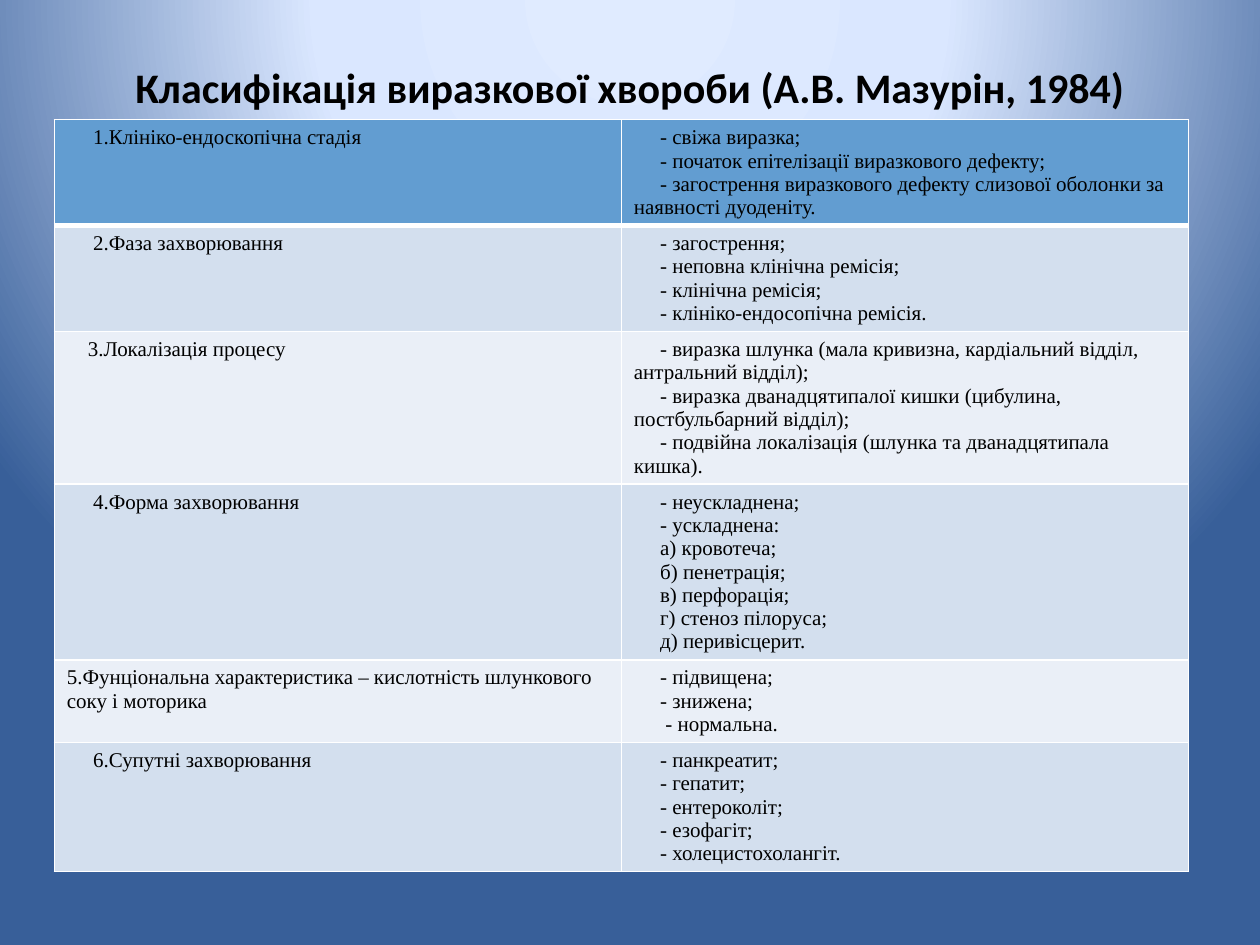
from dataclasses import dataclass

from lxml import etree
from pptx import Presentation
from pptx.dml.color import RGBColor
from pptx.enum.text import MSO_ANCHOR, PP_ALIGN
from pptx.oxml import parse_xml
from pptx.oxml.ns import qn
from pptx.util import Pt

CENTER, LEFT = PP_ALIGN.CENTER, PP_ALIGN.LEFT
MIDDLE = MSO_ANCHOR.MIDDLE
NAMESPACE = "http://schemas.openxmlformats.org/drawingml/2006/main"

BLACK, WHITE = "000000", "FFFFFF"
HEADER_FILL, ODD_FILL, EVEN_FILL = "629DD1", "D3DFEE", "EAEFF7"
BACKGROUND_STOPS = [(0, "E0EBFF"), (40, "DAE7FF"), (100, "385F99")]

TITLE = "Класифiкацiя виразкової хвороби (А.В. Мазурiн, 1984)"
TITLE_FORMAT = {"name": "Calibri", "size": Pt(24), "bold": True}
CELL_FORMAT = {"name": "Times New Roman", "size": Pt(12), "bold": False}
INDENT = 15
COLUMN_WIDTH, MINIMUM_ROW_HEIGHT = 324, 29.5


@dataclass
class Line:
    text: str
    indent: float = INDENT


@dataclass
class Criterion:
    name: Line
    variants: list[Line]


def lines(*texts: str) -> list[Line]:
    return [Line(text) for text in texts]


CRITERIA = [
    Criterion(Line("1.Клiнiко-ендоскопiчна стадiя"), lines(
        "- свiжа виразка;",
        "- початок епiтелiзацiї виразкового дефекту;",
        "- загострення виразкового дефекту слизової оболонки за наявностi дуоденiту.")),
    Criterion(Line("2.Фаза захворювання"), lines(
        "- загострення;",
        "- неповна клiнiчна ремiсiя;",
        "- клiнiчна ремiсiя;",
        "- клiнiко-ендосопiчна ремiсiя.")),
    Criterion(Line("3.Локалiзацiя процесу", 12), lines(
        "- виразка шлунка (мала кривизна, кардiальний вiддiл, антральний вiддiл);",
        "- виразка дванадцятипалої кишки (цибулина, постбульбарний вiддiл);",
        "- подвiйна локалiзацiя (шлунка та дванадцятипала кишка).")),
    Criterion(Line("4.Форма захворювання"), lines(
        "- неускладнена;",
        "- ускладнена:",
        "а) кровотеча;",
        "б) пенетрацiя;",
        "в) перфорацiя;",
        "г) стеноз пiлоруса;",
        "д) перивiсцерит.")),
    Criterion(Line("5.Фунцiональна характеристика – кислотнiсть шлункового соку i моторика", 0),
              lines("- пiдвищена;", "- знижена;") + [Line("- нормальна.", 18)]),
    Criterion(Line("6.Супутнi захворювання"), lines(
        "- панкреатит;",
        "- гепатит;",
        "- ентероколiт;",
        "- езофагiт;",
        "- холецистохолангiт.")),
]


def color(value: str) -> RGBColor:
    return RGBColor.from_string(value)


def add_run(paragraph, text: str, font_format: dict) -> None:
    run = paragraph.add_run()
    run.text = text
    for attribute, value in font_format.items():
        setattr(run.font, attribute, value)
    run.font.color.rgb = color(BLACK)


def set_background(slide) -> None:
    """Fill the background with a radial gradient centred above the slide."""
    slide.background.fill.solid()
    solid_fill = next(slide.element.iter(qn("a:solidFill")))
    stops = "".join(
        f'<a:gs pos="{position * 1000}"><a:srgbClr val="{value}"/></a:gs>'
        for position, value in BACKGROUND_STOPS)
    gradient = parse_xml(
        f'<a:gradFill xmlns:a="{NAMESPACE}" rotWithShape="1"><a:gsLst>{stops}</a:gsLst>'
        '<a:path path="circle"><a:fillToRect l="50000" t="-80000" r="50000" b="180000"/>'
        '</a:path></a:gradFill>')
    solid_fill.getparent().replace(solid_fill, gradient)


def set_borders(cell, widths: dict[str, float]) -> None:
    properties = cell._tc.get_or_add_tcPr()
    for index, (side, width) in enumerate(widths.items()):
        border = etree.Element(qn(f"a:ln{side}"), w=str(Pt(width)))
        fill = etree.SubElement(border, qn("a:solidFill"))
        etree.SubElement(fill, qn("a:srgbClr"), val=WHITE)
        properties.insert(index, border)


def fill_cell(cell, content: list[Line], fill: str) -> None:
    cell.fill.solid()
    cell.fill.fore_color.rgb = color(fill)
    frame = cell.text_frame
    for index, line in enumerate(content):
        paragraph = frame.add_paragraph() if index else frame.paragraphs[0]
        paragraph.alignment = LEFT
        properties = paragraph._p.get_or_add_pPr()
        properties.set("marL", "0")
        properties.set("indent", str(Pt(line.indent)))
        add_run(paragraph, line.text, CELL_FORMAT)


def add_title(slide) -> None:
    title = slide.shapes.title
    position = {"left": Pt(36), "top": Pt(21.6), "width": Pt(648), "height": Pt(55.4)}
    for attribute, value in position.items():
        setattr(title, attribute, value)
    title.text_frame.vertical_anchor = MIDDLE
    paragraph = title.text_frame.paragraphs[0]
    paragraph.alignment = CENTER
    add_run(paragraph, TITLE, TITLE_FORMAT)


def add_classification(slide) -> None:
    """Add the table; its rows grow from the minimum height to fit the text."""
    table = slide.shapes.add_table(
        len(CRITERIA), 2, Pt(31), Pt(68.4),
        Pt(2 * COLUMN_WIDTH), Pt(MINIMUM_ROW_HEIGHT * len(CRITERIA))).table
    table.first_row = table.horz_banding = False
    for index, criterion in enumerate(CRITERIA):
        fill = (ODD_FILL if index % 2 else EVEN_FILL) if index else HEADER_FILL
        borders = {"L": 1, "R": 1, "T": 3 if index == 1 else 1, "B": 1 if index else 3}
        for column, content in enumerate([[criterion.name], criterion.variants]):
            cell = table.cell(index, column)
            fill_cell(cell, content, fill)
            set_borders(cell, borders)


def main() -> None:
    presentation = Presentation()
    presentation.slide_width, presentation.slide_height = Pt(720), Pt(540)
    slide = presentation.slides.add_slide(presentation.slide_layouts[5])
    set_background(slide)
    add_title(slide)
    add_classification(slide)
    presentation.save("out.pptx")


if __name__ == "__main__":
    main()
